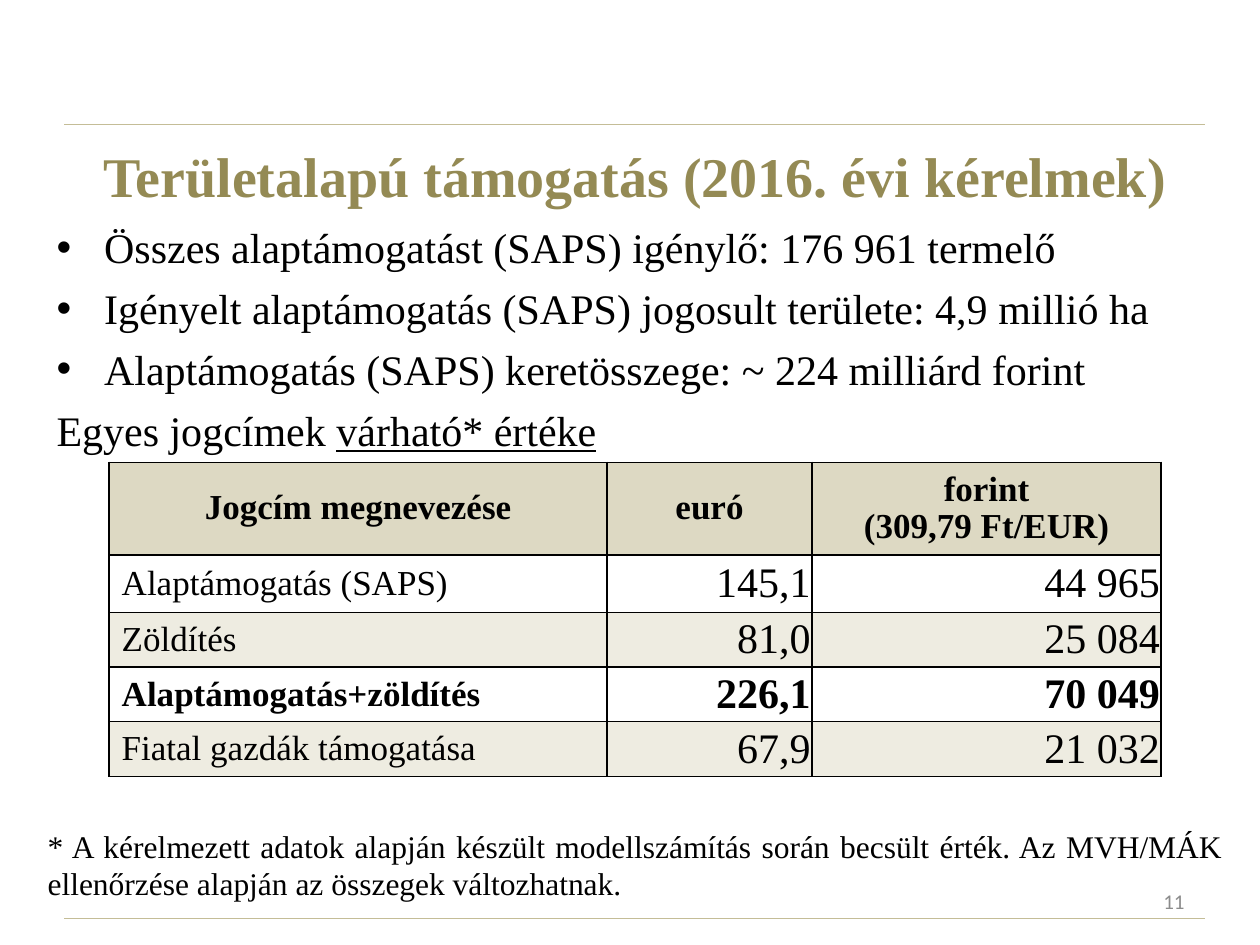
from lxml import etree
from pptx import Presentation
from pptx.dml.color import RGBColor
from pptx.enum.shapes import MSO_CONNECTOR
from pptx.enum.text import MSO_ANCHOR, PP_ALIGN
from pptx.oxml.ns import qn
from pptx.util import Cm, Pt

LINE = MSO_CONNECTOR.STRAIGHT
TOP, MID = MSO_ANCHOR.TOP, MSO_ANCHOR.MIDDLE
LEFT, MIDDLE, RIGHT, FULL = (PP_ALIGN.LEFT, PP_ALIGN.CENTER,
                             PP_ALIGN.RIGHT, PP_ALIGN.JUSTIFY)
SERIF = "Times New Roman"


def tint(code):
    return RGBColor.from_string(code)


def write(para, text, align=LEFT, color="000000", **style):
    para.alignment = align
    run = para.add_run()
    run.text = text
    for key, val in {"name": SERIF, **style}.items():
        setattr(run.font, key, val)
    run.font.color.rgb = tint(color)


deck = Presentation()
deck.slide_width, deck.slide_height = Cm(25.4), Cm(19.05)
slide = deck.slides.add_slide(deck.slide_layouts[6])
shapes = slide.shapes

# Rules above and below the content
for y in (2.51, 18.52):
    rule = shapes.add_connector(LINE, Cm(1.3), Cm(y), Cm(24.3), Cm(y))
    rule.line.color.rgb = tint("C4BD97")
    rule.line.width = Pt(0.75)
    etree.SubElement(rule._element.spPr, qn("a:effectLst"))

# Text boxes: title, body, footnote, page number
frames = {}
for name, area, anchor in (
    ("title", (0.71, 2.34, 24.2, 2.39), MID),
    ("body", (0.89, 4.34, 24.2, 13.08), TOP),
    ("note", (0.71, 16.54, 24.2, 1.8), TOP),
    ("page", (18.21, 17.65, 5.92, 1.02), MID),
):
    frame = shapes.add_textbox(*map(Cm, area)).text_frame
    frame.word_wrap = True
    frame.vertical_anchor = anchor
    frames[name] = frame

write(frames["title"].paragraphs[0],
      "Területalapú támogatás (2016. évi kérelmek)",
      MIDDLE, "948A54", size=Pt(32), bold=True)
write(frames["note"].paragraphs[0],
      "* A kérelmezett adatok alapján készült modellszámítás során becsült "
      "érték. Az MVH/MÁK ellenőrzése alapján az összegek változhatnak.",
      FULL, size=Pt(18))
write(frames["page"].paragraphs[0], "11", RIGHT, "8C8C8C",
      name="Calibri", size=Pt(12))

# Bullets, then the lead-in to the table
body = frames["body"]
facts = ("Összes alaptámogatást (SAPS) igénylő: 176 961 termelő",
         "Igényelt alaptámogatás (SAPS) jogosult területe: 4,9 millió ha",
         "Alaptámogatás (SAPS) keretösszege: ~ 224 milliárd forint")
for i, fact in enumerate(facts):
    para = body.add_paragraph() if i else body.paragraphs[0]
    props = para._p.get_or_add_pPr()
    props.set("marL", str(Cm(0.96)))
    props.set("indent", str(-Cm(0.96)))
    etree.SubElement(props, qn("a:buFont"), typeface="Arial")
    etree.SubElement(props, qn("a:buChar"), char="•")
    if i:
        para.space_before = Pt(6)
    write(para, fact, size=Pt(24))
lead = body.add_paragraph()
lead.space_before = Pt(6)
write(lead, "Egyes jogcímek ", size=Pt(24))
write(lead, "várható* értéke", size=Pt(24), underline=True)

# Table of support amounts
rows = (("Jogcím megnevezése", "euró", "forint\n(309,79 Ft/EUR)"),
        ("Alaptámogatás (SAPS)", "145,1", "44 965"),
        ("Zöldítés", "81,0", "25 084"),
        ("Alaptámogatás+zöldítés", "226,1", "70 049"),
        ("Fiatal gazdák támogatása", "67,9", "21 032"))
wides = (10.04, 4.13, 7.04)
highs = (1.83, 1.16, 1.04, 1.04, 1.04)
fills = ("DDD9C3", "FFFFFF", "EEECE1", "FFFFFF", "EEECE1")
grid = shapes.add_table(len(rows), len(wides), Cm(2.2), Cm(9.32),
                        Cm(sum(wides)), Cm(sum(highs))).table
for col, wide in zip(grid.columns, wides):
    col.width = Cm(wide)
for r, (row, high, fill) in enumerate(zip(rows, highs, fills)):
    grid.rows[r].height = Cm(high)
    for c, text in enumerate(row):
        cell = grid.cell(r, c)
        cell.vertical_anchor = MID
        amount = r > 0 and c > 0
        if amount:
            for side in ("left", "right", "top", "bottom"):
                setattr(cell, "margin_" + side, Cm(0.03))
        align = MIDDLE if r == 0 else RIGHT if amount else LEFT
        for i, part in enumerate(text.split("\n")):
            frame = cell.text_frame
            para = frame.add_paragraph() if i else frame.paragraphs[0]
            if r == 0:
                para.line_spacing = 0.95
            write(para, part, align, size=Pt(24 if amount else 20),
                  bold=r in (0, 3))
        # Borders come before the fill in the cell properties
        props = cell._tc.get_or_add_tcPr()
        for tag in ("a:lnL", "a:lnR", "a:lnT", "a:lnB"):
            edge = etree.SubElement(props, qn(tag), w=str(Pt(1)))
            solid = etree.SubElement(edge, qn("a:solidFill"))
            etree.SubElement(solid, qn("a:srgbClr"), val="000000")
        cell.fill.solid()
        cell.fill.fore_color.rgb = tint(fill)

deck.save("out.pptx")
